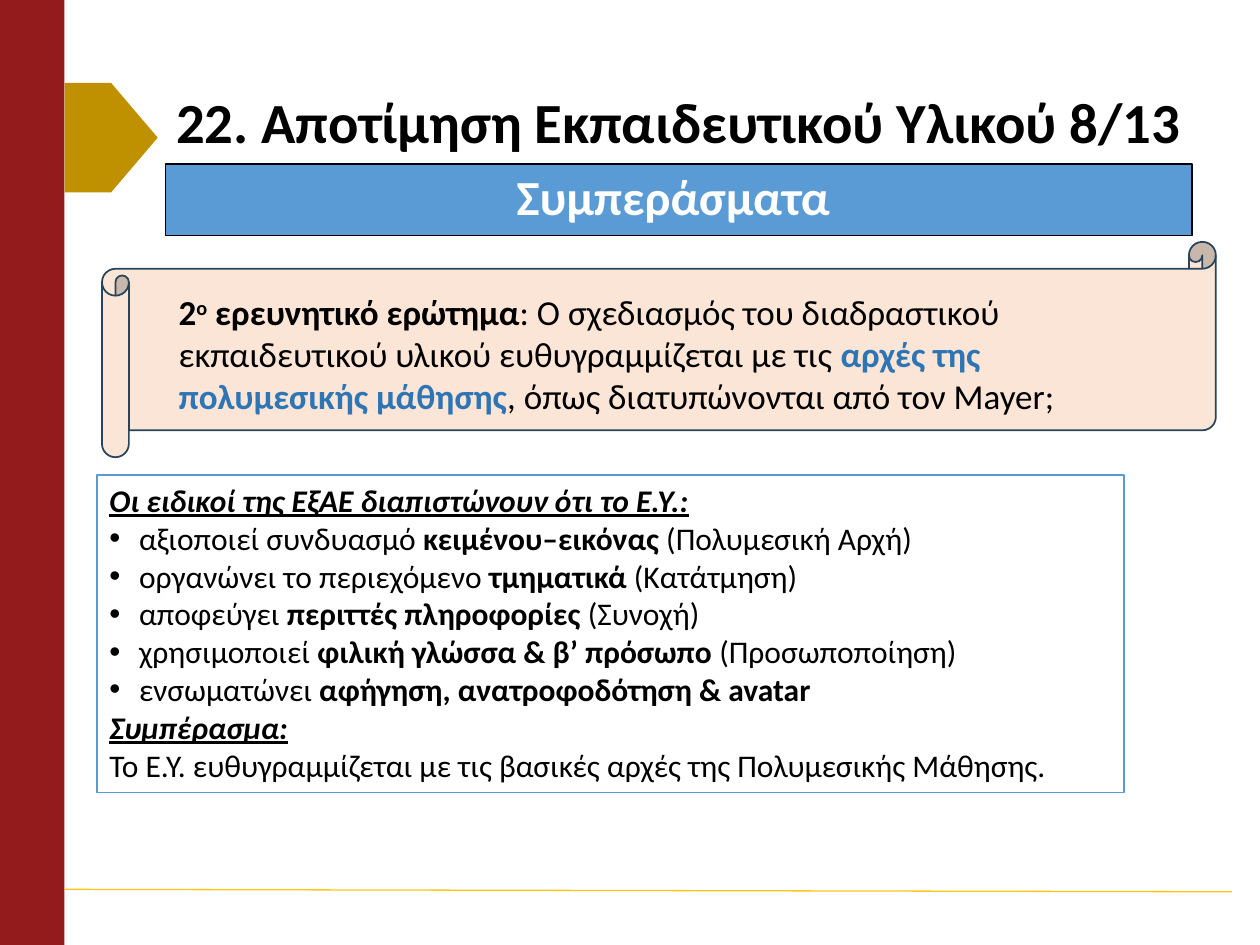
from dataclasses import dataclass

from lxml import etree
from pptx import Presentation
from pptx.dml.color import RGBColor
from pptx.enum.shapes import MSO_CONNECTOR, MSO_SHAPE
from pptx.enum.text import MSO_ANCHOR, PP_ALIGN
from pptx.oxml.ns import qn
from pptx.util import Pt


@dataclass(frozen=True)
class Theme:
    font: str = "Calibri"
    black: str = "000000"
    white: str = "FFFFFF"
    red: str = "931B1B"
    gold: str = "BF9000"
    yellow: str = "FFC61A"
    blue: str = "5B9BD5"
    accent: str = "2E75B6"
    navy: str = "28445D"
    peach: str = "FBE5D6"
    title_size: float = 32.4
    banner_size: float = 28
    question_size: float = 20
    body_size: float = 18


THEME = Theme()

PLAIN = {}
BOLD = {"bold": True}
HEADING = {"bold": True, "italic": True, "underline": True}
ACCENT = {"bold": True, "color": THEME.accent}
SUPERSCRIPT = {"bold": True, "baseline": "30000"}

QUESTION = [
    ("2", BOLD),
    ("ο", SUPERSCRIPT),
    (" ερευνητικό ερώτημα", BOLD),
    (": Ο σχεδιασμός του διαδραστικού εκπαιδευτικού υλικού "
     "ευθυγραμμίζεται με τις ", PLAIN),
    ("αρχές της πολυμεσικής μάθησης", ACCENT),
    (", όπως διατυπώνονται από τον Mayer;", PLAIN),
]
FINDINGS = [
    ("αξιοποιεί συνδυασμό ", "κειμένου–εικόνας", " (Πολυμεσική Αρχή)"),
    ("οργανώνει το περιεχόμενο ", "τμηματικά", " (Κατάτμηση)"),
    ("αποφεύγει ", "περιττές πληροφορίες", " (Συνοχή)"),
    ("χρησιμοποιεί ", "φιλική γλώσσα & β’ πρόσωπο", " (Προσωποποίηση)"),
    ("ενσωματώνει ", "αφήγηση, ανατροφοδότηση & avatar", ""),
]


def rgb(color):
    return RGBColor.from_string(color)


def add_panel(slide, kind, box, fill, line=None, line_width=1):
    panel = slide.shapes.add_shape(kind, *map(Pt, box))
    panel.shadow.inherit = False
    panel.fill.solid()
    panel.fill.fore_color.rgb = rgb(fill)
    if line:
        panel.line.color.rgb = rgb(line)
        panel.line.width = Pt(line_width)
    else:
        panel.line.fill.background()
    return panel


def set_frame(frame, **settings):
    for name, value in {"word_wrap": True, **settings}.items():
        setattr(frame, name, value)
    return frame


def write_runs(paragraph, runs, size, color=THEME.black):
    """Add (text, format) pairs to a paragraph."""
    for text, style in runs:
        run = paragraph.add_run()
        run.text = text
        values = {"name": THEME.font, "size": Pt(size), **style}
        run.font.color.rgb = rgb(values.pop("color", color))
        baseline = values.pop("baseline", None)
        if baseline:
            run._r.get_or_add_rPr().set("baseline", baseline)
        for name, value in values.items():
            setattr(run.font, name, value)


def add_bullet(paragraph, indent=17):
    properties = paragraph._p.get_or_add_pPr()
    properties.set("marL", str(Pt(indent)))
    properties.set("indent", str(-Pt(indent)))
    etree.SubElement(properties, qn("a:buFont")).set("typeface", "Arial")
    etree.SubElement(properties, qn("a:buChar")).set("char", "•")


def add_frame_decor(slide, width, height):
    """Red side band, gold pointer and thin footer rule."""
    band = 36.9
    add_panel(slide, MSO_SHAPE.RECTANGLE, (0, 0, band, height), THEME.red)
    rule = slide.shapes.add_connector(
        MSO_CONNECTOR.STRAIGHT, Pt(band), Pt(508.2), Pt(width - 16), Pt(509.6))
    rule.line.color.rgb = rgb(THEME.yellow)
    rule.line.width = Pt(0.75)
    etree.SubElement(rule._element.spPr, qn("a:effectLst"))
    add_panel(slide, MSO_SHAPE.PENTAGON, (band, 47.4, 53.2, 62.5), THEME.gold)


def add_title(slide, box):
    title = slide.shapes.add_textbox(*map(Pt, box))
    frame = set_frame(title.text_frame, vertical_anchor=MSO_ANCHOR.MIDDLE)
    paragraph = frame.paragraphs[0]
    paragraph.line_spacing = 0.9
    write_runs(paragraph, [("22. Αποτίμηση Εκπαιδευτικού Υλικού 8/13", BOLD)],
               THEME.title_size)


def add_banner(slide, box):
    banner = add_panel(slide, MSO_SHAPE.RECTANGLE, box, THEME.blue,
                       THEME.black, 0.75)
    inset = Pt(8.64)
    frame = set_frame(banner.text_frame, vertical_anchor=MSO_ANCHOR.MIDDLE,
                      margin_left=inset, margin_right=inset,
                      margin_top=inset, margin_bottom=inset)
    paragraph = frame.paragraphs[0]
    paragraph.alignment = PP_ALIGN.CENTER
    paragraph.line_spacing = 0.9
    write_runs(paragraph, [("Συμπεράσματα ", BOLD)], THEME.banner_size,
               THEME.white)


def add_question(slide, box):
    """Scroll with the research question laid over it."""
    left, top, width, height = box
    add_panel(slide, MSO_SHAPE.HORIZONTAL_SCROLL, box, THEME.peach, THEME.navy)
    question = slide.shapes.add_textbox(
        Pt(left + 36.7), Pt(top + 24.5), Pt(width - 53.3), Pt(height - 40))
    frame = set_frame(question.text_frame)
    write_runs(frame.paragraphs[0], QUESTION, THEME.question_size)


def add_findings(slide, box):
    findings = add_panel(slide, MSO_SHAPE.RECTANGLE, box, THEME.white,
                         THEME.blue)
    frame = set_frame(findings.text_frame, vertical_anchor=MSO_ANCHOR.TOP)
    lines = [([("Οι ειδικοί της ΕξΑΕ διαπιστώνουν ότι το Ε.Υ.:", HEADING)], False)]
    for lead, key, principle in FINDINGS:
        runs = [(lead, PLAIN), (key, BOLD)]
        if principle:
            runs.append((principle, PLAIN))
        lines.append((runs, True))
    lines += [
        ([("Συμπέρασμα:", HEADING)], False),
        ([("Το Ε.Υ. ευθυγραμμίζεται με τις βασικές αρχές της "
           "Πολυμεσικής Μάθησης.", PLAIN)], False),
    ]
    for index, (runs, bulleted) in enumerate(lines):
        paragraph = frame.add_paragraph() if index else frame.paragraphs[0]
        paragraph.alignment = PP_ALIGN.LEFT
        if bulleted:
            add_bullet(paragraph)
        write_runs(paragraph, runs, THEME.body_size)


def main():
    width, height = 720, 540
    deck = Presentation()
    deck.slide_width, deck.slide_height = Pt(width), Pt(height)
    slide = deck.slides.add_slide(deck.slide_layouts[6])
    add_frame_decor(slide, width, height)
    add_title(slide, (93.6, 49, 601.2, 45.4))
    add_question(slide, (58.3, 138.2, 636.5, 123.1))
    add_banner(slide, (94.4, 93.8, 586.8, 41))
    add_findings(slide, (55.4, 271.4, 586.8, 181.6))
    deck.save("out.pptx")


if __name__ == "__main__":
    main()
